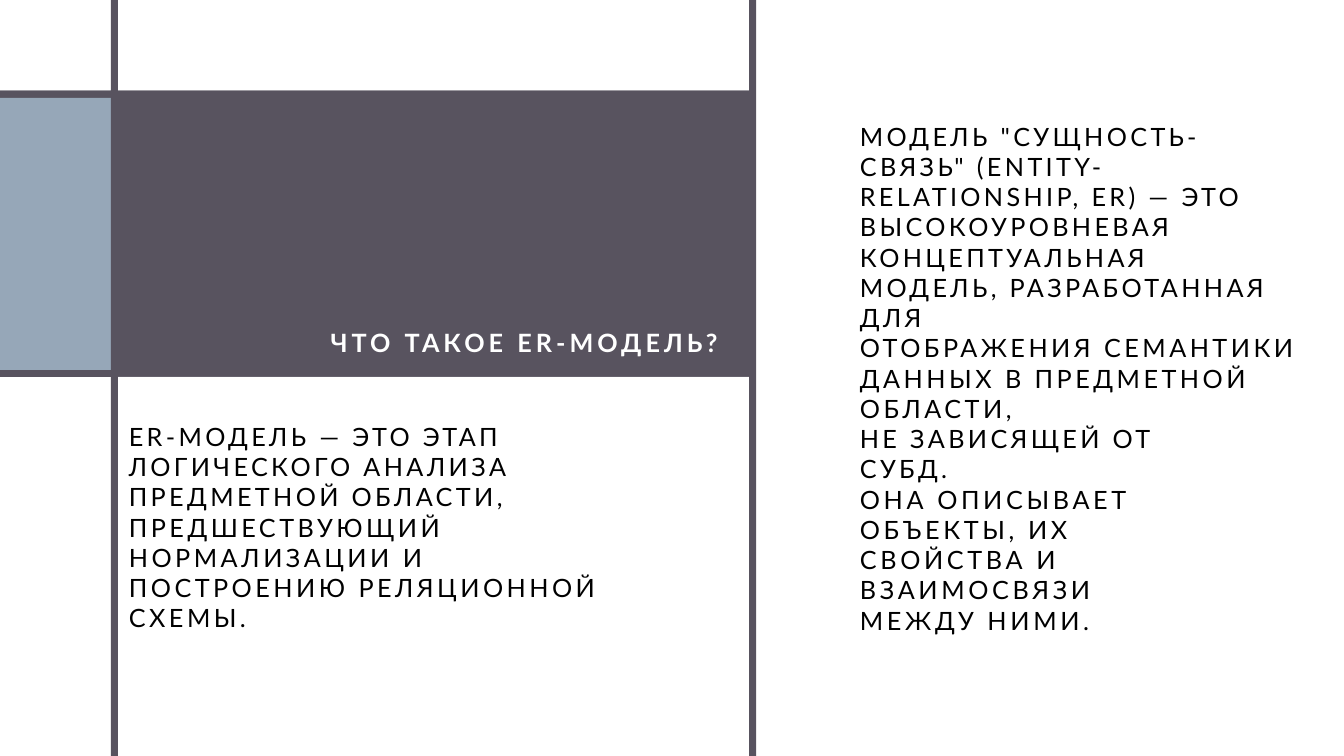
from dataclasses import dataclass

from pptx import Presentation
from pptx.dml.color import RGBColor
from pptx.enum import shapes, text
from pptx.oxml import parse_xml
from pptx.oxml.ns import nsdecls, qn
from pptx.util import Inches, Pt


@dataclass(frozen=True)
class Theme:
    frame: str = "58535F"
    accent: str = "96A7B8"
    light: str = "FFFFFF"
    dark: str = "000000"
    font: str = "Lato"
    size: int = 18


THEME = Theme()

# Grid: the bars of the frame and the edges of the title band
BAR = 0.07
LEFT_BAR, RIGHT_BAR = 1.1, 7.43
BAND_TOP, BAND_BOTTOM = 0.9, 3.74
WIDTH, HEIGHT = 13.33, 7.5

TITLE = "ЧТО ТАКОЕ ER-МОДЕЛЬ?"

# Each paragraph: text, letter spacing in points, right margin in inches
STAGE = [
    ("ER-МОДЕЛЬ — ЭТО ЭТАП ЛОГИЧЕСКОГО АНАЛИЗА ПРЕДМЕТНОЙ ОБЛАСТИ,", 2.4, 1.1),
    ("ПРЕДШЕСТВУЮЩИЙ НОРМАЛИЗАЦИИ И ПОСТРОЕНИЮ РЕЛЯЦИОННОЙ СХЕМЫ.", 2.5, 1.1),
]
DEFINITION = [
    ('МОДЕЛЬ "СУЩНОСТЬ- СВЯЗЬ" (ENTITY-RELATIONSHIP, ER) — ЭТО ВЫСОКОУРОВНЕВАЯ '
     "КОНЦЕПТУАЛЬНАЯ МОДЕЛЬ, РАЗРАБОТАННАЯ ДЛЯ", 2.4, 0.1),
    ("ОТОБРАЖЕНИЯ СЕМАНТИКИ ДАННЫХ В ПРЕДМЕТНОЙ ОБЛАСТИ,", 2.5, 0),
    ("НЕ ЗАВИСЯЩЕЙ ОТ СУБД.", 2.4, 1.1),
    ("ОНА ОПИСЫВАЕТ ОБЪЕКТЫ, ИХ СВОЙСТВА И ВЗАИМОСВЯЗИ МЕЖДУ НИМИ.", 2.6, 1.1),
]


def paint(shape, color, opacity=100):
    shape.shadow.inherit = False
    shape.line.fill.background()
    shape.fill.solid()
    shape.fill.fore_color.rgb = RGBColor.from_string(color)
    if opacity < 100:
        fill_color = shape.fill._xPr.find(qn("a:solidFill"))[0]
        fill_color.append(parse_xml(
            f'<a:alpha {nsdecls("a")} val="{opacity * 1000}"/>'))


def add_panel(slide, left, top, right, bottom, color, opacity=100):
    shape = slide.shapes.add_shape(
        shapes.MSO_SHAPE.RECTANGLE, Inches(left), Inches(top),
        Inches(right - left), Inches(bottom - top))
    paint(shape, color, opacity)


def add_outline(slide, contours, color):
    """Draw several closed contours as one filled shape."""
    builder = None
    for contour in contours:
        start, *points = [(Inches(x), Inches(y)) for x, y in contour]
        if builder is None:
            builder = slide.shapes.build_freeform(*start, scale=1.0)
        else:
            builder.move_to(*start)
        builder.add_line_segments(points, close=True)
    paint(builder.convert_to_shape(), color)


def add_text(slide, left, top, width, height, paragraphs, color,
             bold=False, inset_top=0.05):
    box = slide.shapes.add_textbox(
        Inches(left), Inches(top), Inches(width), Inches(height))
    frame = box.text_frame
    frame.word_wrap = True
    frame.auto_size = text.MSO_AUTO_SIZE.SHAPE_TO_FIT_TEXT
    frame.margin_top = Inches(inset_top)
    frame.text = "\n".join(content for content, _, _ in paragraphs)
    for paragraph, (_, spacing, right) in zip(frame.paragraphs, paragraphs):
        properties = paragraph._p.get_or_add_pPr()
        properties.set("marL", str(Inches(0.01)))
        properties.set("marR", str(Inches(right)))
        for run in paragraph.runs:
            run.font.name = THEME.font
            run.font.size = Pt(THEME.size)
            run.font.bold = bold
            run.font.color.rgb = RGBColor.from_string(color)
            run._r.get_or_add_rPr().set("spc", str(round(spacing * 100)))


def add_frame(slide):
    inner_left, inner_top = LEFT_BAR + BAR, BAND_TOP + BAR
    cross = [
        (RIGHT_BAR, BAND_TOP), (inner_left, BAND_TOP), (inner_left, 0),
        (LEFT_BAR, 0), (LEFT_BAR, BAND_TOP), (0, BAND_TOP), (0, inner_top),
        (LEFT_BAR, inner_top), (LEFT_BAR, HEIGHT), (inner_left, HEIGHT),
        (inner_left, inner_top), (RIGHT_BAR, inner_top),
    ]
    outer = RIGHT_BAR + BAR
    divider = [(outer, 0), (RIGHT_BAR, 0), (RIGHT_BAR, HEIGHT), (outer, HEIGHT)]
    add_outline(slide, [cross, divider], THEME.frame)


def main():
    presentation = Presentation()
    presentation.slide_width = Inches(WIDTH)
    presentation.slide_height = Inches(HEIGHT)
    slide = presentation.slides.add_slide(presentation.slide_layouts[6])

    # Title band, accent block and lower panel
    add_panel(slide, 0, BAND_TOP, RIGHT_BAR, BAND_BOTTOM, THEME.frame)
    add_panel(slide, 0, BAND_TOP + BAR, LEFT_BAR, BAND_BOTTOM - BAR, THEME.accent)
    add_panel(slide, LEFT_BAR + BAR, BAND_BOTTOM, RIGHT_BAR, HEIGHT,
              THEME.light, opacity=75)
    add_frame(slide)

    # Definition, stage and title
    add_text(slide, 8.42, 0.84, 4.58, 4.95, DEFINITION, THEME.dark, inset_top=0.36)
    add_text(slide, LEFT_BAR + BAR, 4.13, 6.26, 1.62, STAGE, THEME.dark)
    add_text(slide, 3.17, 3.2, 6.77, 0.4, [(TITLE, 2.9, 0)], THEME.light, bold=True)

    presentation.save("out.pptx")


if __name__ == "__main__":
    main()
